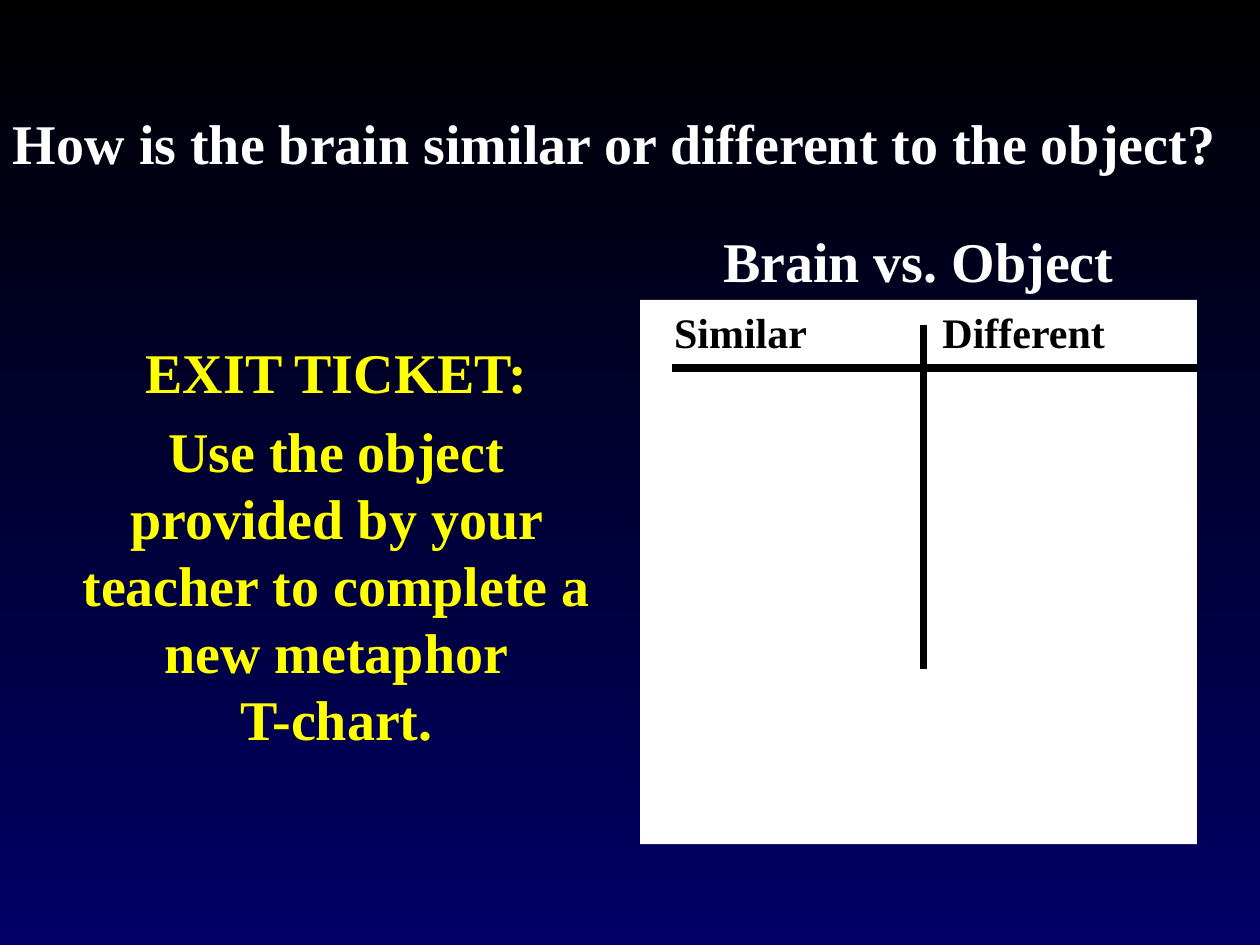
from dataclasses import dataclass

from lxml.etree import SubElement
from pptx import Presentation
from pptx.dml.color import RGBColor
from pptx.enum.shapes import MSO_CONNECTOR, MSO_SHAPE
from pptx.enum.text import MSO_ANCHOR, PP_ALIGN
from pptx.oxml.ns import qn
from pptx.util import Inches, Pt


@dataclass(frozen=True)
class Theme:
    font: str = "Times New Roman"
    black: RGBColor = RGBColor(0, 0, 0)
    navy: RGBColor = RGBColor(0, 0, 0x66)
    white: RGBColor = RGBColor(255, 255, 255)
    yellow: RGBColor = RGBColor(255, 255, 0)
    large: Pt = Pt(32)
    medium: Pt = Pt(24)
    rule: Pt = Pt(4.25)


def set_attributes(target, values):
    for name, value in values.items():
        setattr(target, name, value)


class SlideBuilder:
    def __init__(self, slide, theme):
        self.slide = slide
        self.theme = theme

    def background(self, top, bottom):
        fill = self.slide.background.fill
        fill.gradient()
        fill.gradient_angle = 270
        for stop, color, position in zip(fill.gradient_stops, (top, bottom), (0, 1)):
            stop.color.rgb = color
            stop.position = position

    def fill_text(self, shape, paragraphs, color, size, alignment, anchor):
        frame = shape.text_frame
        set_attributes(frame, {"word_wrap": True, "vertical_anchor": anchor})
        frame.text = "\n".join(paragraphs)
        for paragraph in frame.paragraphs:
            set_attributes(paragraph, {"alignment": alignment, "space_before": Pt(size.pt * 0.2)})
            for run in paragraph.runs:
                set_attributes(run.font, {"name": self.theme.font, "size": size, "bold": True})
                run.font.color.rgb = color

    def text(self, box, paragraphs, color, anchor=MSO_ANCHOR.TOP):
        shape = self.slide.shapes.add_textbox(*map(Inches, box))
        self.fill_text(shape, paragraphs, color, self.theme.large, PP_ALIGN.CENTER, anchor)

    def panel(self, box, headings, inset, tab):
        """Draw a white panel whose column headings are set apart by a tab stop."""
        shape = self.slide.shapes.add_shape(MSO_SHAPE.RECTANGLE, *map(Inches, box))
        shape.shadow.inherit = False
        shape.fill.solid()
        shape.fill.fore_color.rgb = self.theme.white
        shape.line.fill.background()
        self.fill_text(shape, ["\t".join(headings)], self.theme.black, self.theme.medium,
                       PP_ALIGN.LEFT, MSO_ANCHOR.TOP)
        shape.text_frame.margin_left = Inches(inset)
        properties = shape.text_frame.paragraphs[0]._p.get_or_add_pPr()
        tabs = SubElement(properties, qn("a:tabLst"))
        SubElement(tabs, qn("a:tab"), pos=str(Inches(tab)), algn="l")

    def line(self, start, end):
        connector = self.slide.shapes.add_connector(
            MSO_CONNECTOR.STRAIGHT, *map(Inches, (*start, *end)))
        connector.line.color.rgb = self.theme.black
        connector.line.width = self.theme.rule
        SubElement(connector._element.spPr, qn("a:effectLst"))


def main():
    presentation = Presentation()
    set_attributes(presentation, {"slide_width": Inches(10), "slide_height": Inches(7.5)})
    theme = Theme()
    builder = SlideBuilder(presentation.slides.add_slide(presentation.slide_layouts[6]), theme)
    builder.background(theme.black, theme.navy)

    builder.text((-0.08, 0.43, 9.92, 1.4),
                 ["How is the brain similar or different to the object?"],
                 theme.white, MSO_ANCHOR.MIDDLE)
    builder.text((0.46, 2.63, 4.42, 4.08),
                 ["EXIT TICKET:",
                  "Use the object provided by your teacher to complete a new metaphor\vT-chart."],
                 theme.yellow)

    left, top, width = 5.08, 2.38, 4.42
    builder.text((left, top - 0.7, width, 0.7), ["Brain vs. Object"],
                 theme.white, MSO_ANCHOR.BOTTOM)
    builder.panel((left, top, width, 4.32), ["Similar", "Different"], inset=0.27, tab=2.13)

    stem_x, bar_y = 7.33, 2.92
    builder.line((stem_x, 2.58), (stem_x, 5.31))
    builder.line((left + width, bar_y), (left + 0.25, bar_y))
    presentation.save("out.pptx")


if __name__ == "__main__":
    main()
